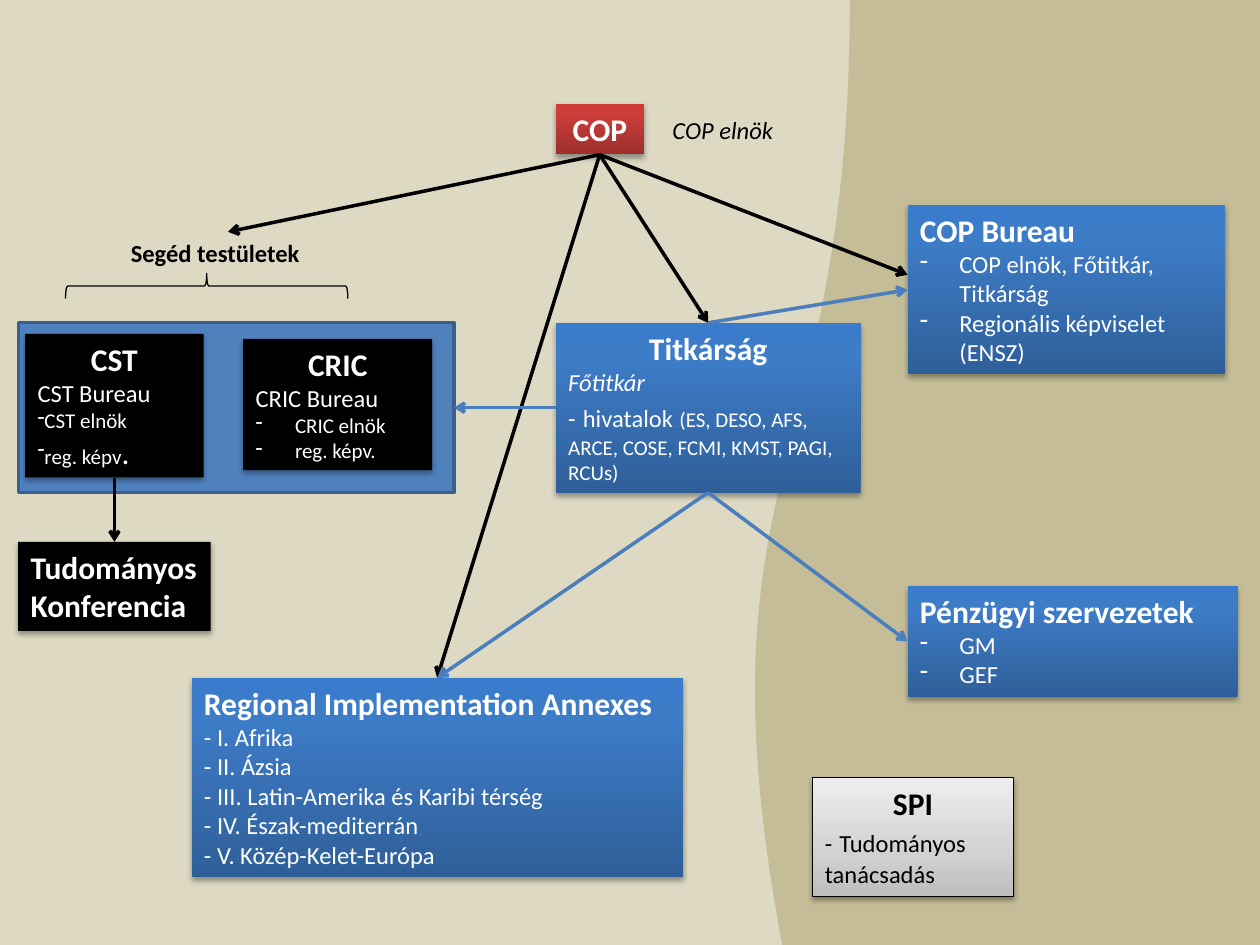
"""Build the chart of convention bodies around the COP."""
from copy import deepcopy
from lxml import etree
from pptx import Presentation
from pptx import util as u
from pptx.dml.color import RGBColor
from pptx.enum import shapes, text
from pptx.oxml import ns

Pt = u.Pt
HUE = {
    "sand": "DDD9C3", "wave": "C4BD97", "panel": "4F81BD", "edge": "3A5F8C",
    "black": "000000", "white": "FFFFFF", "arrow": "4B7EBC",
}
FADE = {
    "red": [(0, "9C2F2D"), (0.8, "CB3E3A"), (1, "CE3B37")],
    "blue": [(0, "2F5F99"), (0.8, "3D7CC7"), (1, "3A7CCB")],
    "grey": [(0, "BDBDBD"), (0.35, "D1D1D1"), (1, "EEEEEE")],
}


def add(node, tag, **attrs):
    """Append a drawing element and return it."""
    return etree.SubElement(node, ns.qn(tag), {k: str(v) for k, v in attrs.items()})


def box(area, paint, ink, paras):
    """Add a text box; each paragraph is a kind and its runs of text, size and style."""
    shape = slide.shapes.add_textbox(*map(Pt, area))
    if paint in FADE:
        shape.fill.gradient()
        shape.fill.gradient_angle = 90
        stops = shape._element.spPr.find(".//" + ns.qn("a:gsLst"))
        stops.append(deepcopy(stops[-1]))
        for stop, (place, tone) in zip(shape.fill.gradient_stops, FADE[paint]):
            stop.position = place
            stop.color.rgb = RGBColor.from_string(tone)
    elif paint:
        shape.fill.solid()
        shape.fill.fore_color.rgb = RGBColor.from_string(HUE[paint])
    if paint == "grey":
        shape.line.color.rgb = RGBColor.from_string(HUE["black"])
        shape.line.width = Pt(0.75)
    if paint:
        glow = add(add(shape._element.spPr, "a:effectLst"), "a:outerShdw", blurRad=Pt(3.1),
                   dist=Pt(1.8), dir=5400000, rotWithShape=0)
        add(add(glow, "a:srgbClr", val=HUE["black"]), "a:alpha", val=35000)
    frame = shape.text_frame
    frame.word_wrap = True
    frame.auto_size = text.MSO_AUTO_SIZE.SHAPE_TO_FIT_TEXT
    for i, (kind, runs) in enumerate(paras):
        para = frame.paragraphs[0] if i == 0 else frame.add_paragraph()
        if kind == "mid":
            para.alignment = text.PP_ALIGN.CENTER
        elif kind in ("dash", "flush"):
            props = para._p.get_or_add_pPr()
            props.set("marL", str(Pt(22.5 if kind == "dash" else 0)))
            props.set("indent", str(Pt(-22.5)))
            add(props, "a:buChar", char="-")
        for words, size, style in runs:
            run = para.add_run()
            run.text = words
            run.font.name = "Calibri"
            run.font.size = Pt(size)
            run.font.bold = style == "b"
            run.font.italic = style == "i"
            run.font.color.rgb = RGBColor.from_string(HUE[ink])
    return shape


deck = Presentation()
deck.slide_width, deck.slide_height = Pt(720), Pt(540)
slide = deck.slides.add_slide(deck.slide_layouts[6])
slide.background.fill.solid()
slide.background.fill.fore_color.rgb = RGBColor.from_string(HUE["sand"])

kinds = shapes.MSO_SHAPE
wave = slide.shapes.add_shape(kinds.FLOWCHART_DOCUMENT, Pt(303.84), Pt(124), Pt(540), Pt(292.3))
wave.rotation = 270
wave._element.spPr.xfrm.set("flipV", "1")
panel = slide.shapes.add_shape(kinds.RECTANGLE, Pt(10.6), Pt(184.3), Pt(248.8), Pt(97.2))
for shape, tone in ((wave, "wave"), (panel, "panel")):
    shape.shadow.inherit = False
    shape.fill.solid()
    shape.fill.fore_color.rgb = RGBColor.from_string(HUE[tone])
wave.line.fill.background()
panel.line.color.rgb = RGBColor.from_string(HUE["edge"])
panel.line.width = Pt(2)

cop = box((317.6, 59.2, 50.4, 29.1), "red", "white", [("mid", [("COP", 18, "b")])])
cst = box((14.4, 190.8, 102, 82), "black", "white", [
    ("mid", [("CST", 18, "b")]),
    ("left", [("CST Bureau", 14, "")]),
    ("flush", [("CST elnök", 12, "")]),
    ("flush", [("reg. képv", 12, ""), (".", 18, "")]),
])
box((139, 193.7, 108, 75), "black", "white", [
    ("mid", [("CRIC", 18, "b")]),
    ("left", [("CRIC Bureau", 14, "")]),
    ("dash", [("CRIC elnök", 12, "")]),
    ("dash", [("reg. képv.", 12, "")]),
])
funds = box((518.6, 334.8, 188.6, 63.4), "blue", "white", [
    ("left", [("Pénzügyi szervezetek", 18, "b")]),
    ("dash", [("GM", 14, "")]),
    ("dash", [("GEF", 14, "")]),
])
staff = box((317.6, 184.5, 174.2, 97), "blue", "white", [
    ("mid", [("Titkárság", 18, "b")]),
    ("left", [("Főtitkár", 14, "i")]),
    ("left", [("-", 14, ""), (" ", 18, ""), ("hivatalok", 14, ""), (" ", 16, ""),
              ("(ES, DESO, AFS, ARCE, COSE, FCMI, KMST, PAGI, RCUs)", 12, "")]),
])
box((377.2, 62, 102, 24.2), None, "black", [("left", [("COP elnök", 14, "i")])])
bureau = box((518.6, 117, 181.4, 97), "blue", "white", [
    ("left", [("COP Bureau", 18, "b")]),
    ("dash", [("COP elnök, Főtitkár, Titkárság", 14, "")]),
    ("dash", [("Regionális képviselet (ENSZ)", 14, "")]),
])
lands = ["I. Afrika", "II. Ázsia", "III. Latin-Amerika és Karibi térség",
         "IV. Észak-mediterrán", "V. Közép-Kelet-Európa"]
annex = box((109.5, 387.4, 280.8, 113.8), "blue", "white",
            [("left", [("Regional Implementation Annexes", 18, "b")])]
            + [("left", [("- " + land, 14, "")]) for land in lands])
forum = box((10.4, 309.6, 110, 50.9), "black", "white",
            [("left", [("Tudományos Konferencia", 18, "b")])])
box((464.2, 444.2, 115, 68), "grey", "black", [
    ("mid", [("SPI", 18, "b")]),
    ("left", [("-", 14, ""), (" ", 18, ""), ("Tudományos tanácsadás", 14, "")]),
])

brace = slide.shapes.add_shape(kinds.LEFT_BRACE, Pt(110.9), Pt(82.8), Pt(14.4), Pt(161.3))
brace.rotation = 90
brace.adjustments[0], brace.adjustments[1] = 0.08, 0.5
brace.shadow.inherit = False
brace.fill.background()
brace.line.color.rgb = RGBColor.from_string(HUE["black"])
brace.line.width = Pt(0.75)
box((67.7, 132.5, 125.3, 24.2), None, "black", [("left", [("Segéd testületek", 14, "b")])])

links = [
    ("black", (342.7, 88.4), (130.3, 132.5)),
    ("black", (342.7, 88.4), (518.6, 157)),
    ("black", (65.4, 272.9), (65.4, 309.6)),
    ("black", (342.7, 88.4), (249.8, 387.4)),
    ("black", (342.7, 88.4), (404.6, 184.5)),
    ("arrow", (404.6, 281.5), (518.6, 366.5)),
    ("arrow", (404.6, 184.5), (518.6, 165.6)),
    ("arrow", (404.6, 281.5), (249.8, 387.4)),
    ("arrow", (317.6, 233), (259.4, 233)),
]
for tone, start, end in links:
    link = slide.shapes.add_connector(shapes.MSO_CONNECTOR.STRAIGHT, *map(Pt, start + end))
    link.line.color.rgb = RGBColor.from_string(HUE[tone])
    link.line.width = Pt(2)
    add(link.line._get_or_add_ln(), "a:tailEnd", type="arrow")
    add(link._element.spPr, "a:effectLst")

deck.save("out.pptx")
